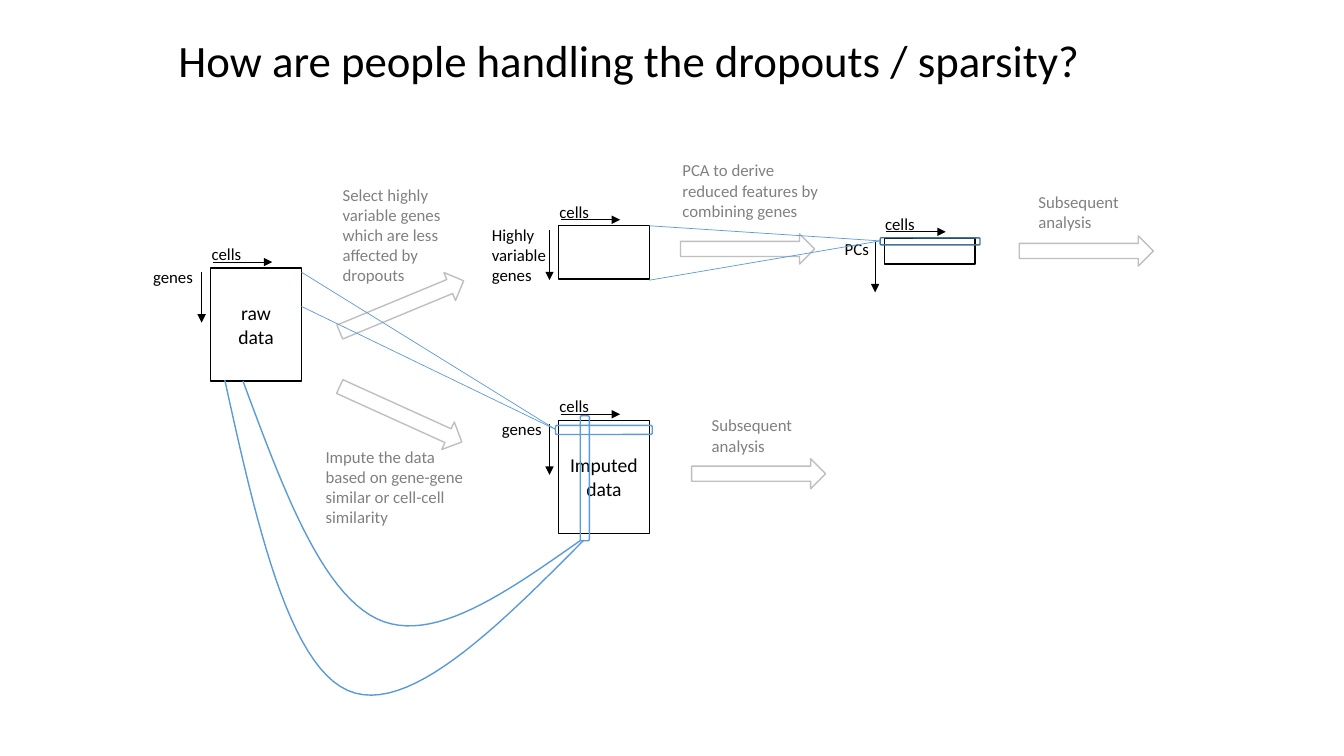
from lxml import etree
from pptx import Presentation
from pptx.dml.color import RGBColor
from pptx.enum import shapes, text
from pptx.oxml import ns
from pptx.util import Inches, Pt

FONT = "Calibri"
BLACK = RGBColor(0x00, 0x00, 0x00)
WHITE = RGBColor(0xFF, 0xFF, 0xFF)
GRAY = RGBColor(0x80, 0x80, 0x80)
SILVER = RGBColor(0xBF, 0xBF, 0xBF)
BLUE = RGBColor(0x5B, 0x9B, 0xD5)
DARK_BLUE = RGBColor(0x43, 0x73, 0x9E)

CURVE_STEPS = 24  # straight pieces per curve segment
MATRIX_WIDTH = 0.9


def write(frame, lines, size, color, align=text.PP_ALIGN.LEFT):
    """Fill a text frame with one paragraph per line."""
    for number, line in enumerate(lines):
        para = frame.paragraphs[0] if number == 0 else frame.add_paragraph()
        para.alignment = align
        span = para.add_run()
        span.text = line
        span.font.name = FONT
        span.font.size = Pt(size)
        span.font.color.rgb = color


def add_label(page, left, top, width, height, lines, color=BLACK, wrap=True):
    box = page.shapes.add_textbox(Inches(left), Inches(top), Inches(width), Inches(height))
    box.text_frame.word_wrap = wrap
    write(box.text_frame, lines, 12, color)


def style_outline(shape, color, fill=None):
    shape.shadow.inherit = False
    shape.line.color.rgb = color
    shape.line.width = Pt(1)
    if fill is None:
        shape.fill.background()
    else:
        shape.fill.solid()
        shape.fill.fore_color.rgb = fill


def add_outline(page, kind, left, top, width, height, color, fill=None, turn=0):
    shape = page.shapes.add_shape(
        kind, Inches(left), Inches(top), Inches(width), Inches(height))
    style_outline(shape, color, fill)
    shape.rotation = turn
    return shape


def add_line(page, start, end, color, arrow=False):
    line = page.shapes.add_connector(
        shapes.MSO_CONNECTOR.STRAIGHT, *[Inches(value) for value in (*start, *end)])
    line.line.color.rgb = color
    line.line.width = Pt(0.5)
    if arrow:
        head = etree.SubElement(line.line._get_or_add_ln(), ns.qn("a:tailEnd"))
        head.set("type", "triangle")
    etree.SubElement(line._element.spPr, ns.qn("a:effectLst"))


def add_step_arrow(page, left, top, turn=0):
    add_outline(page, shapes.MSO_SHAPE.RIGHT_ARROW, left, top, 1.33, 0.3,
                SILVER, WHITE, turn)


def add_matrix(page, left, top, height, row_label, row_box, lines=()):
    """Draw a data matrix with its cell axis above and row axis at its left.

    row_box gives the row label's left, top, width, height and wrapping.
    """
    matrix = add_outline(page, shapes.MSO_SHAPE.RECTANGLE, left, top,
                         MATRIX_WIDTH, height, BLACK)
    matrix.text_frame.vertical_anchor = text.MSO_ANCHOR.MIDDLE
    write(matrix.text_frame, lines, 14, BLACK, text.PP_ALIGN.CENTER)
    add_label(page, left - 0.09, top - 0.29, 0.5, 0.3, ["cells"], wrap=False)
    *place, wrap = row_box
    add_label(page, *place, [row_label], wrap=wrap)
    add_line(page, (left + 0.02, top - 0.06), (left + 0.61, top - 0.06), BLACK, arrow=True)
    add_line(page, (left - 0.09, top + 0.04), (left - 0.09, top + 0.54), BLACK, arrow=True)


def add_highlight(page, left, top, width, height, color=BLUE, turn=0):
    add_outline(page, shapes.MSO_SHAPE.ROUNDED_RECTANGLE, left, top, width, height,
                color, turn=turn)


def bezier_point(points, share):
    weights = ((1 - share) ** 3, 3 * share * (1 - share) ** 2,
               3 * share ** 2 * (1 - share), share ** 3)
    return tuple(Inches(sum(weight * point[axis] for weight, point in zip(weights, points)))
                 for axis in (0, 1))


def add_curve(page, points):
    """Draw joined cubic curves: a start point, then three points per curve."""
    trail = [bezier_point(points[first:first + 4], step / CURVE_STEPS)
             for first in range(0, len(points) - 1, 3)
             for step in range(1, CURVE_STEPS + 1)]
    builder = page.shapes.build_freeform(Inches(points[0][0]), Inches(points[0][1]))
    builder.add_line_segments(trail, close=False)
    style_outline(builder.convert_to_shape(), BLUE)


def add_title(page, words):
    title = page.shapes.title
    title.left, title.top = Inches(1.67), Inches(0)
    title.width, title.height = Inches(10), Inches(1.25)
    frame = title.text_frame
    frame.word_wrap = True
    frame.auto_size = text.MSO_AUTO_SIZE.NONE
    frame.vertical_anchor = text.MSO_ANCHOR.MIDDLE
    write(frame, [words], 32, BLACK)
    frame.paragraphs[0].line_spacing = 0.9


def main():
    deck = Presentation()
    deck.slide_width, deck.slide_height = Inches(13.33), Inches(7.5)
    page = deck.slides.add_slide(deck.slide_layouts.get_by_name("Title Only"))
    add_title(page, "How are people handling the dropouts / sparsity?")

    # Upper route: gene selection
    add_step_arrow(page, 3.32, 2.89, 337.5)
    add_label(page, 3.3, 1.78, 1.28, 1.11,
              ["Select highly variable genes", "which are less affected by dropouts"], GRAY)
    add_matrix(page, 5.54, 2.24, 0.53, "Highly variable genes", (4.78, 2.18, 0.77, 0.71, True))

    # Upper route: principal components
    add_step_arrow(page, 6.75, 2.32)
    add_label(page, 6.67, 1.54, 1.6, 0.71,
              ["PCA to derive reduced features by combining genes"], GRAY)
    add_matrix(page, 8.77, 2.36, 0.26, "PCs", (8.28, 2.32, 0.77, 0.3, True))
    add_highlight(page, 8.73, 2.36, 0.99, 0.07, DARK_BLUE)
    for top in (2.24, 2.78):
        add_line(page, (6.44, top), (8.73, 2.39), BLUE)

    # Raw data
    add_matrix(page, 2.09, 2.66, 1.12, "genes", (1.42, 2.6, 0.6, 0.3, False), ["raw", "data"])

    # Lower route: imputation
    add_step_arrow(page, 3.31, 3.96, 24.4)
    add_label(page, 3.13, 4.38, 1.71, 0.91,
              ["Impute the data based on gene-gene similar or cell-cell similarity"], GRAY)
    add_matrix(page, 5.54, 4.17, 1.12, "genes", (4.88, 4.11, 0.6, 0.3, False),
               ["Imputed", "data"])

    # Gene-gene similarity
    add_highlight(page, 5.51, 4.22, 0.96, 0.09)
    for top in (2.7, 3.04):
        add_line(page, (2.99, top), (5.51, 4.26), BLUE)

    # Cell-cell similarity
    add_highlight(page, 5.18, 4.7, 1.24, 0.09, turn=90)
    add_curve(page, [(2.41, 3.78), (2.8, 4.83), (3.18, 5.87), (3.74, 6.14),
                     (4.29, 6.4), (5.02, 5.88), (5.76, 5.36)])
    add_curve(page, [(2.23, 3.77), (2.54, 5.18), (2.86, 6.59), (3.45, 6.85),
                     (4.04, 7.11), (4.92, 6.24), (5.79, 5.36)])

    # Subsequent analysis ends both routes
    for arrow_left, arrow_top, label_left, label_top in (
            (10.11, 2.34, 10.2, 1.85), (6.86, 4.55, 6.96, 4.07)):
        add_step_arrow(page, arrow_left, arrow_top)
        add_label(page, label_left, label_top, 1.02, 0.5, ["Subsequent analysis"], GRAY)

    deck.save("out.pptx")


if __name__ == "__main__":
    main()
